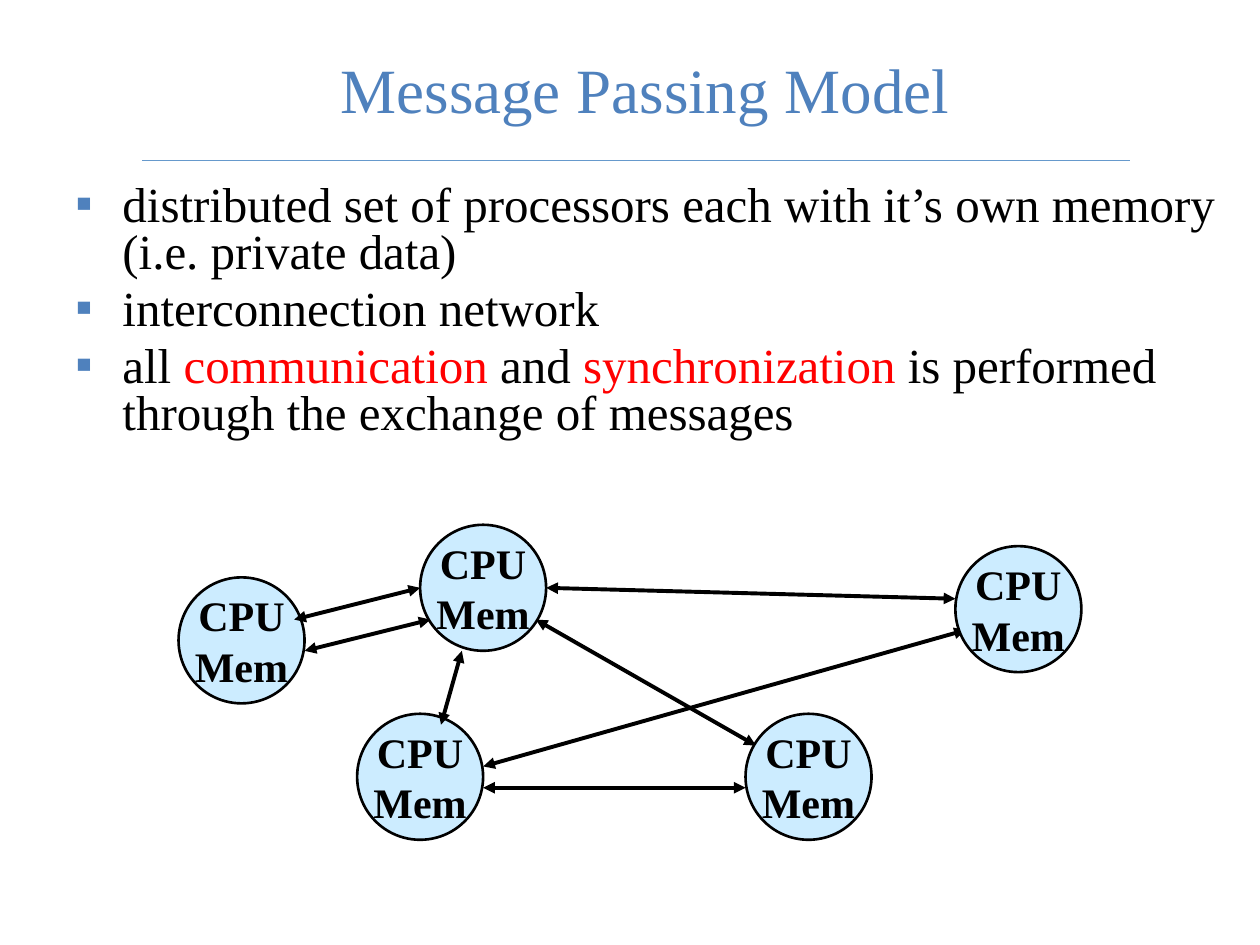
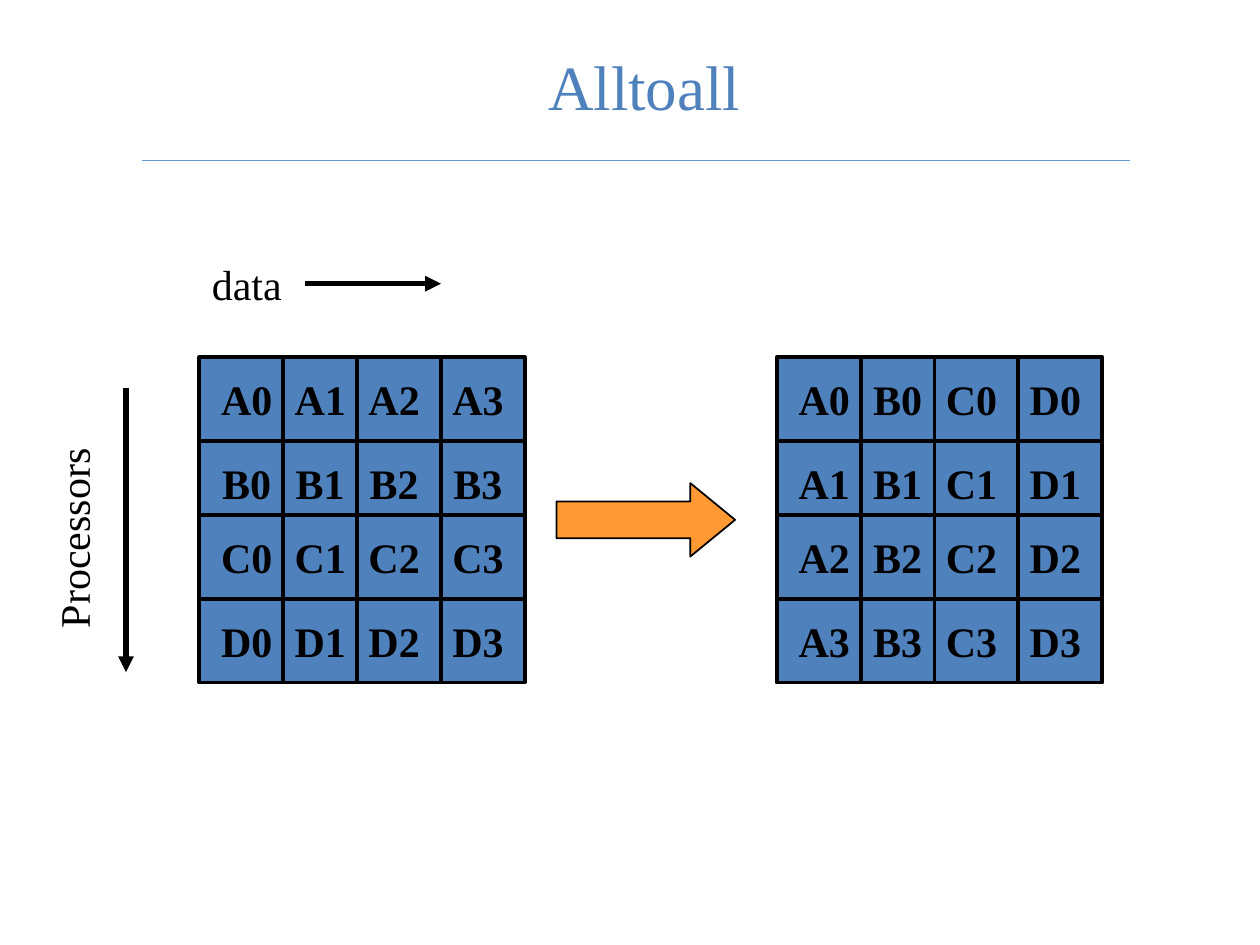
from dataclasses import dataclass

from lxml import etree
from pptx import Presentation
from pptx.dml.color import RGBColor
from pptx.enum.shapes import MSO_CONNECTOR, MSO_SHAPE
from pptx.enum.text import MSO_ANCHOR as ANCHOR, MSO_AUTO_SIZE as AUTO, PP_ALIGN as ALIGN
from pptx.oxml.ns import qn
from pptx.util import Cm, Pt


@dataclass(frozen=True)
class Theme:
    font: str = "Times New Roman"
    accent: str = "4F81BD"
    rule: str = "6699CC"
    ink: str = "000000"
    alert: str = "FF0000"
    node: str = "CCECFF"
    arrow: str = "FF9933"
    title_size: int = 36
    body_size: int = 28
    label_size: int = 24


T = Theme()
CELL = 1.69
GRID_OFFSETS = (0, 1.69, 3.18, 4.87)
NODE_SIZE = 2.54


def rgb(value):
    return RGBColor.from_string(value)


def set_all(obj, values):
    for name, value in values.items():
        setattr(obj, name, value)


# Text
def add_run(p, text, size, color=T.ink, bold=False):
    r = p.add_run()
    r.text = text
    set_all(r.font, {"name": T.font, "size": Pt(size), "bold": bold})
    r.font.color.rgb = rgb(color)


def add_text_box(s, box, anchor=ANCHOR.TOP, auto_size=AUTO.NONE):
    sp = s.shapes.add_textbox(*map(Cm, box))
    set_all(sp.text_frame, {"word_wrap": True, "vertical_anchor": anchor,
                            "auto_size": auto_size})
    return sp


def add_title(s, text, box, align):
    p = add_text_box(s, box, ANCHOR.MIDDLE).text_frame.paragraphs[0]
    p.alignment = align
    add_run(p, text, T.title_size, T.accent)


def add_label(s, text, box, align=ALIGN.CENTER, bold=False):
    sp = add_text_box(s, box, auto_size=AUTO.SHAPE_TO_FIT_TEXT)
    p = sp.text_frame.paragraphs[0]
    p.alignment = align
    add_run(p, text, T.label_size, bold=bold)
    return sp


def add_bullet(p):
    pPr = p._p.get_or_add_pPr()
    set_all_xml = {"marL": Cm(0.95), "indent": Cm(-0.95)}
    for name, value in set_all_xml.items():
        pPr.set(name, str(int(value)))
    color = etree.SubElement(pPr, qn("a:buClr"))
    etree.SubElement(color, qn("a:srgbClr"), val=T.accent)
    etree.SubElement(pPr, qn("a:buFont"), typeface=T.font)
    etree.SubElement(pPr, qn("a:buChar"), char="▪")


def add_bullets(s, items, box):
    """Each item is a list of (text, colour) runs."""
    tf = add_text_box(s, box).text_frame
    for i, runs in enumerate(items):
        p = tf.add_paragraph() if i else tf.paragraphs[0]
        add_bullet(p)
        p.line_spacing = 0.8
        if i:
            p.space_before = Pt(5.6)
        for text, color in runs:
            add_run(p, text, T.body_size, color)


# Shapes and lines
def add_box(s, kind, box, fill, line_width):
    sp = s.shapes.add_shape(kind, *map(Cm, box))
    sp.shadow.inherit = False
    sp.fill.solid()
    sp.fill.fore_color.rgb = rgb(fill)
    sp.line.color.rgb = rgb(T.ink)
    sp.line.width = Pt(line_width)
    return sp


def add_line(s, start, end, width, color=T.ink, heads=()):
    """heads holds headEnd and/or tailEnd, in that order."""
    c = s.shapes.add_connector(MSO_CONNECTOR.STRAIGHT, *map(Cm, (*start, *end)))
    c.line.color.rgb = rgb(color)
    c.line.width = Pt(width)
    ln = c.line._get_or_add_ln()
    for head in heads:
        etree.SubElement(ln, qn(f"a:{head}"), type="triangle")
    etree.SubElement(c._element.spPr, qn("a:effectLst"))


def add_node(s, left, top):
    sp = add_box(s, MSO_SHAPE.OVAL, (left, top, NODE_SIZE, NODE_SIZE), T.node, 1.5)
    tf = sp.text_frame
    set_all(tf, {"word_wrap": False, "vertical_anchor": ANCHOR.MIDDLE})
    for i, text in enumerate(("CPU", "Mem")):
        p = tf.add_paragraph() if i else tf.paragraphs[0]
        p.alignment = ALIGN.CENTER
        add_run(p, text, T.label_size, bold=True)


def add_link(s, start, end):
    add_line(s, start, end, 2.25, heads=("headEnd", "tailEnd"))


def add_grid(s, left, top, rows):
    for y in GRID_OFFSETS:
        for x in GRID_OFFSETS:
            add_box(s, MSO_SHAPE.RECTANGLE, (left + x, top + y, CELL, CELL),
                    T.accent, 2.25)
    for y, row in zip(GRID_OFFSETS, rows):
        for x, text in zip(GRID_OFFSETS, row):
            shift = 0.42 if x else 0.21
            add_label(s, text, (left + x - shift, top + y + 0.21, 2.33, 1.27), bold=True)


# Slides
def new_slide(prs, title, title_box, align):
    s = prs.slides.add_slide(prs.slide_layouts[6])
    add_line(s, (2.87, 3.23), (22.78, 3.23), 0.75, T.rule)
    add_title(s, title, title_box, align)
    return s


def message_passing_slide(prs):
    s = new_slide(prs, "Message Passing Model", (3.91, 0.2, 18.19, 3.18), ALIGN.CENTER)
    add_bullets(s, [
        [("distributed set of processors each with it’s own memory (i.e. private data)", T.ink)],
        [("interconnection network", T.ink)],
        [("all ", T.ink), ("communication", T.alert), (" and ", T.ink),
         ("synchronization", T.alert),
         (" is performed through the exchange of messages", T.ink)],
    ], (1.27, 3.61, 24.13, 7.82))

    # Network: some links run behind the later nodes
    add_node(s, 3.6, 11.64)
    for start, end in (
        ((5.93, 12.49), (8.47, 11.85)),
        ((6.14, 13.12), (8.68, 12.49)),
        ((10.8, 12.49), (15.24, 15.03)),
        ((11.01, 11.85), (19.26, 12.07)),
        ((9.74, 15.45), (19.47, 12.7)),
        ((9.74, 15.88), (15.03, 15.88)),
    ):
        add_link(s, start, end)
    for left, top in ((7.2, 14.39), (8.47, 10.58), (15.03, 14.39), (19.26, 11.01)):
        add_node(s, left, top)
    add_link(s, (8.89, 14.61), (9.31, 13.12))


def alltoall_slide(prs):
    s = new_slide(prs, "Alltoall", (10.8, 0.13, 14.6, 3.18), ALIGN.LEFT)

    # Data before and after the exchange
    before = [[f"{processor}{i}" for i in range(4)] for processor in "ABCD"]
    add_grid(s, 4.02, 7.2, before)
    add_grid(s, 15.66, 7.2, zip(*before))
    arrow = add_box(s, MSO_SHAPE.RIGHT_ARROW, (11.22, 9.74, 3.6, 1.48), T.arrow, 1)
    arrow.adjustments[1] = 0.61

    # Axes
    add_label(s, "data", (4.02, 5.08, 2.12, 1.27), ALIGN.LEFT)
    add_line(s, (6.14, 5.72), (8.89, 5.72), 3, heads=("tailEnd",))
    sp = add_label(s, "Processors", (0.84, 7.83, 1.52, 5.08))
    sp.rotation = 180
    sp.text_frame._txBody.bodyPr.set("vert", "eaVert")
    add_line(s, (2.54, 7.83), (2.54, 13.55), 3, heads=("tailEnd",))


def main():
    prs = Presentation()
    prs.slide_width, prs.slide_height = Cm(25.4), Cm(19.05)
    message_passing_slide(prs)
    alltoall_slide(prs)
    prs.save("out.pptx")


if __name__ == "__main__":
    main()
